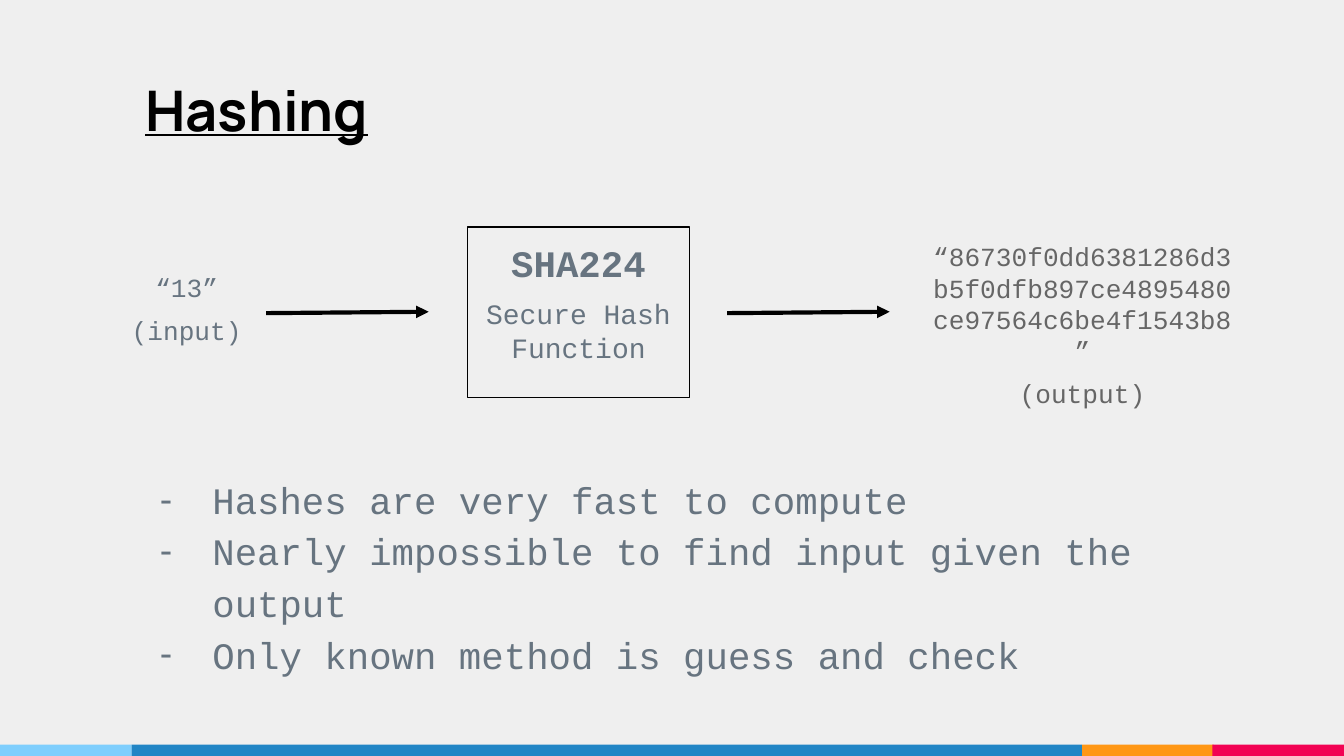
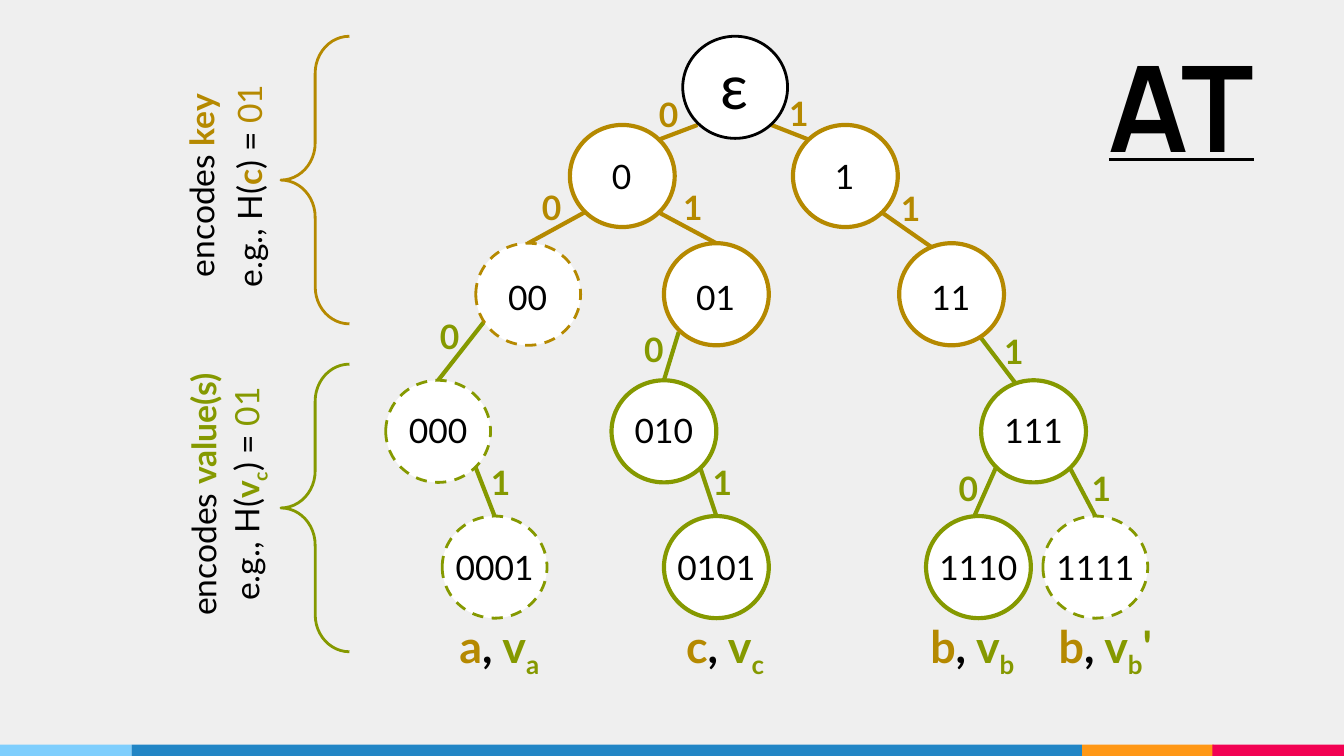
from lxml.etree import SubElement
from pptx import Presentation
from pptx.dml.color import RGBColor
from pptx.enum.dml import MSO_LINE
from pptx.enum.shapes import MSO_CONNECTOR, MSO_SHAPE
from pptx.enum.text import MSO_ANCHOR as ANCHOR, MSO_AUTO_SIZE, PP_ALIGN as ALIGN
from pptx.oxml.ns import qn
from pptx.util import Pt

PX = 9144  # 100 px to the inch
PAGE_WIDTH = 1000
COLOURS = {
    "page": "EFEFEF", "sky": "7ECEFD", "blue": "2185C5",
    "orange": "FF9715", "red": "F20253",
    "black": "000000", "white": "FFFFFF", "slate": "677480",
    "grey": "666666", "key": "B58900", "value": "859900",
}
# Footer band: colour, left, width
BANDS = [("orange", 805, 98), ("red", 902, 98), ("sky", 0, 98), ("blue", 98, 707)]

CODE = {"name": "Courier New", "size": Pt(14), "bold": False}
LATO = {"name": "Lato", "size": Pt(18), "bold": False}
BOLD = {"bold": True}
TITLE = {"name": "Manrope", "bold": True, "underline": True}

# Hash tree: circle top, label top and label width at each depth
NODE_WIDTH, NODE_HEIGHT = 78, 76
LABEL_HEIGHT, TAG_WIDTH = 46, 97
LEVELS = [(27, 40, 65), (93, 108, 65), (181, 198, 65), (283, 297, 92), (384, 399, 92)]
LEVEL_COLOURS = ["black", "key", "key", "value", "value"]
DASHED = {"00", "000", "0001", "1111"}
NODE_LEFTS = {
    "": 508, "0": 424, "1": 590, "00": 354, "01": 494, "11": 669,
    "000": 287, "010": 455, "111": 730,
    "0001": 329, "0101": 494, "1110": 689, "1111": 776,
}
# Edge into each node: start, end, corner of its bit tag
EDGES = {
    "0": ((490, 104), (519, 93), (449, 62)),
    "1": ((602, 104), (574, 93), (546, 61)),
    "00": ((393, 181), (435, 158), (362, 131)),
    "01": ((490, 158), (533, 181), (467, 131)),
    "11": ((699, 188), (656, 158), (629, 132)),
    "000": ((326, 283), (366, 232), (286, 227)),
    "010": ((494, 283), (505, 247), (438, 237)),
    "111": ((760, 291), (725, 245), (706, 238)),
    "0001": ((368, 384), (354, 348), (324, 336)),
    "0101": ((533, 384), (521, 348), (489, 336)),
    "1110": ((725, 384), (741, 348), (672, 340)),
    "1111": ((815, 384), (796, 348), (771, 340)),
}
# Leaf caption: left, key letter, mark after the value
LEAVES = [(323, "a", ""), (491, "c", ""), (675, "b", ""), (774, "b", "'")]


def colour(name):
    return RGBColor.from_string(COLOURS[name])


def px(*lengths):
    return [length * PX for length in lengths]


# Text
def add_span(para, text, colour_name, style, baseline=0):
    span = para.add_run()
    span.text = text
    for name, value in style.items():
        setattr(span.font, name, value)
    span.font.color.rgb = colour(colour_name)
    if baseline:
        span._r.get_or_add_rPr().set("baseline", str(baseline * 1000))


def set_bullet(para, char, colour_name):
    props = para._p.get_or_add_pPr()
    if not char:
        props.set("marL", "0")
        props.set("indent", "0")
        SubElement(props, qn("a:buNone"))
        return
    props.set("marL", str(50 * PX))
    props.set("indent", str(-39 * PX))
    tint = SubElement(props, qn("a:buClr"))
    SubElement(tint, qn("a:srgbClr")).set("val", COLOURS[colour_name])
    SubElement(props, qn("a:buChar")).set("char", char)


def write(box, paragraphs, style, align=ALIGN.CENTER, anchor=ANCHOR.MIDDLE,
          before=(0,), spacing=1.0, bullet=None):
    """Fill a box; a span is (text, colour, style changes, baseline)."""
    frame = box.text_frame
    settings = {"word_wrap": True, "auto_size": MSO_AUTO_SIZE.NONE,
                "vertical_anchor": anchor}
    settings.update({f"margin_{side}": 10 * PX
                     for side in ("left", "top", "right", "bottom")})
    for name, value in settings.items():
        setattr(frame, name, value)
    for index, spans in enumerate(paragraphs):
        para = frame.add_paragraph() if index else frame.paragraphs[0]
        para.alignment = align
        para.line_spacing = spacing
        para.space_before = Pt(before[min(index, len(before) - 1)])
        set_bullet(para, bullet, spans[0][1])
        for text, colour_name, changes, *baseline in spans:
            add_span(para, text, colour_name, {**style, **changes}, *baseline)


def place(box, area):
    box.left, box.top, box.width, box.height = px(*area)
    return box


def add_title(page, text, size, area):
    write(place(page.shapes.title, area), [[(text, "black", {"size": Pt(size)})]],
          TITLE, align=ALIGN.LEFT, anchor=ANCHOR.BOTTOM)


def add_body(page, index, area, paragraphs, **layout):
    box = place(page.placeholders[index], area)
    write(box, paragraphs, CODE, anchor=ANCHOR.TOP, **{"before": (6,), **layout})
    return box


def add_label(page, area, spans, style=LATO, rotation=0):
    box = page.shapes.add_textbox(*px(*area))
    box.rotation = rotation
    write(box, [spans], style)


# Shapes and lines
def add_shape(page, kind, area, fill=None, line=None, width=1.5):
    shape = page.shapes.add_shape(kind, *px(*area))
    shape.shadow.inherit = False
    if fill:
        shape.fill.solid()
        shape.fill.fore_color.rgb = colour(fill)
    else:
        shape.fill.background()
    if line:
        set_line(shape, line, width)
    else:
        shape.line.fill.background()
    return shape


def set_line(shape, colour_name, width):
    shape.line.color.rgb = colour(colour_name)
    shape.line.width = Pt(width)


def add_line(page, start, end, colour_name, arrow=False):
    line = page.shapes.add_connector(MSO_CONNECTOR.STRAIGHT, *px(*start, *end))
    set_line(line, colour_name, 2.25)
    if arrow:
        SubElement(line.line._get_or_add_ln(), qn("a:tailEnd")).set("type", "triangle")
    SubElement(line._element.spPr, qn("a:effectLst"))


def add_page(deck, layout):
    page = deck.slides.add_slide(deck.slide_layouts.get_by_name(layout))
    page.background.fill.solid()
    page.background.fill.fore_color.rgb = colour("page")
    for fill, left, width in BANDS:
        add_shape(page, MSO_SHAPE.RECTANGLE, (left, 554, width, 8.5), fill)
    return page


# Slide 1
def build_hashing(deck):
    page = add_page(deck, "Comparison")
    add_title(page, "Hashing", 30, (98, 22, 707, 94))

    points = ["Hashes are very fast to compute",
              "Nearly impossible to find input given the output",
              "Only known method is guess and check"]
    add_body(page, 2, (98, 340, 832, 127),
             [[(point, "slate", {"size": Pt(20)})] for point in points],
             align=ALIGN.LEFT, before=(6, 0), spacing=1.15, bullet="-")

    add_body(page, 1, (86, 192, 106, 89),
             [[(text, "slate", {})] for text in ("“13”", "(input)")])
    function_box = add_body(page, 3, (348, 169, 165, 127), [
        [("SHA224", "slate", {"size": Pt(20), "bold": True})],
        [("Secure Hash Function", "slate", {"size": Pt(15)})]])
    set_line(function_box, "black", 0.75)
    digest = "“86730f0dd6381286d3b5f0dfb897ce4895480ce97564c6be4f1543b8”"
    add_body(page, 4, (682, 169, 247, 127),
             [[(text, "grey", {})] for text in (digest, "(output)")])
    for left in (198, 541):
        add_line(page, (left, 233), (left + 121, 232), "black", arrow=True)


# Slide 2
def add_edge(page, bits):
    start, end, _ = EDGES[bits]
    add_line(page, start, end, LEVEL_COLOURS[len(bits)])


def add_tag(page, bits):
    corner = EDGES[bits][2]
    add_label(page, (*corner, TAG_WIDTH, LABEL_HEIGHT),
              [(bits[-1], LEVEL_COLOURS[len(bits)], BOLD)])


def add_node(page, bits, left):
    top, label_top, label_width = LEVELS[len(bits)]
    dashed = bits in DASHED
    circle = add_shape(page, MSO_SHAPE.OVAL, (left, top, NODE_WIDTH, NODE_HEIGHT),
                       "white", LEVEL_COLOURS[len(bits)],
                       1.5 if dashed or not bits else 2.25)
    if dashed:
        circle.line.dash_style = MSO_LINE.DASH
    label_left = left + (NODE_WIDTH - label_width) // 2
    add_label(page, (label_left, label_top, label_width, LABEL_HEIGHT),
              [(bits or "ε", "black", {} if bits else {"size": Pt(33)})])


def add_brace(page, top, colour_name):
    brace = add_shape(page, MSO_SHAPE.LEFT_BRACE, (209, top, 51, 214), line=colour_name)
    brace.adjustments[0], brace.adjustments[1] = 0.54, 0.5


def add_example(page, area, colour_name, hashed):
    add_label(page, area, [("e.g., H(", "black", {}), *hashed, (") =", "black", {}),
                           (" 01", colour_name, {})], rotation=270)


def build_tree(deck):
    page = add_page(deck, "Title Only")
    add_title(page, "AT", 64, (815, 28, 140, 113))

    # Side notes
    for word, colour_name, brace_top, area in (
            ("key", "key", 27, (61, 102, 177, 72)),
            ("value(s)", "value", 271, (41, 332, 220, 72))):
        add_label(page, area, [("encodes ", "black", {}), (word, colour_name, BOLD)],
                  rotation=270)
        add_brace(page, brace_top, colour_name)
    add_example(page, (92, 99, 186, 79), "key", [("c", "key", BOLD)])
    add_example(page, (86, 328, 198, 79), "value",
                [("v", "value", BOLD), ("c", "value", BOLD, -25)])

    # Tree
    for bits in EDGES:
        add_tag(page, bits)
    for bits in EDGES:
        add_edge(page, bits)
    for bits, left in NODE_LEFTS.items():
        add_node(page, bits, left)
    for left, letter, mark in LEAVES:
        spans = [(letter, "key", {}), (",", "black", {}), (" v", "value", {}),
                 (letter, "value", {}, -25)]
        if mark:
            spans.append((mark, "value", {}))
        add_label(page, (left, 460, TAG_WIDTH, LABEL_HEIGHT), spans,
                  {**LATO, **BOLD, "size": Pt(24)})


def main():
    deck = Presentation()
    deck.slide_width = PAGE_WIDTH * PX
    deck.slide_height = deck.slide_width * 9 // 16
    build_hashing(deck)
    build_tree(deck)
    deck.save("out.pptx")


if __name__ == "__main__":
    main()
